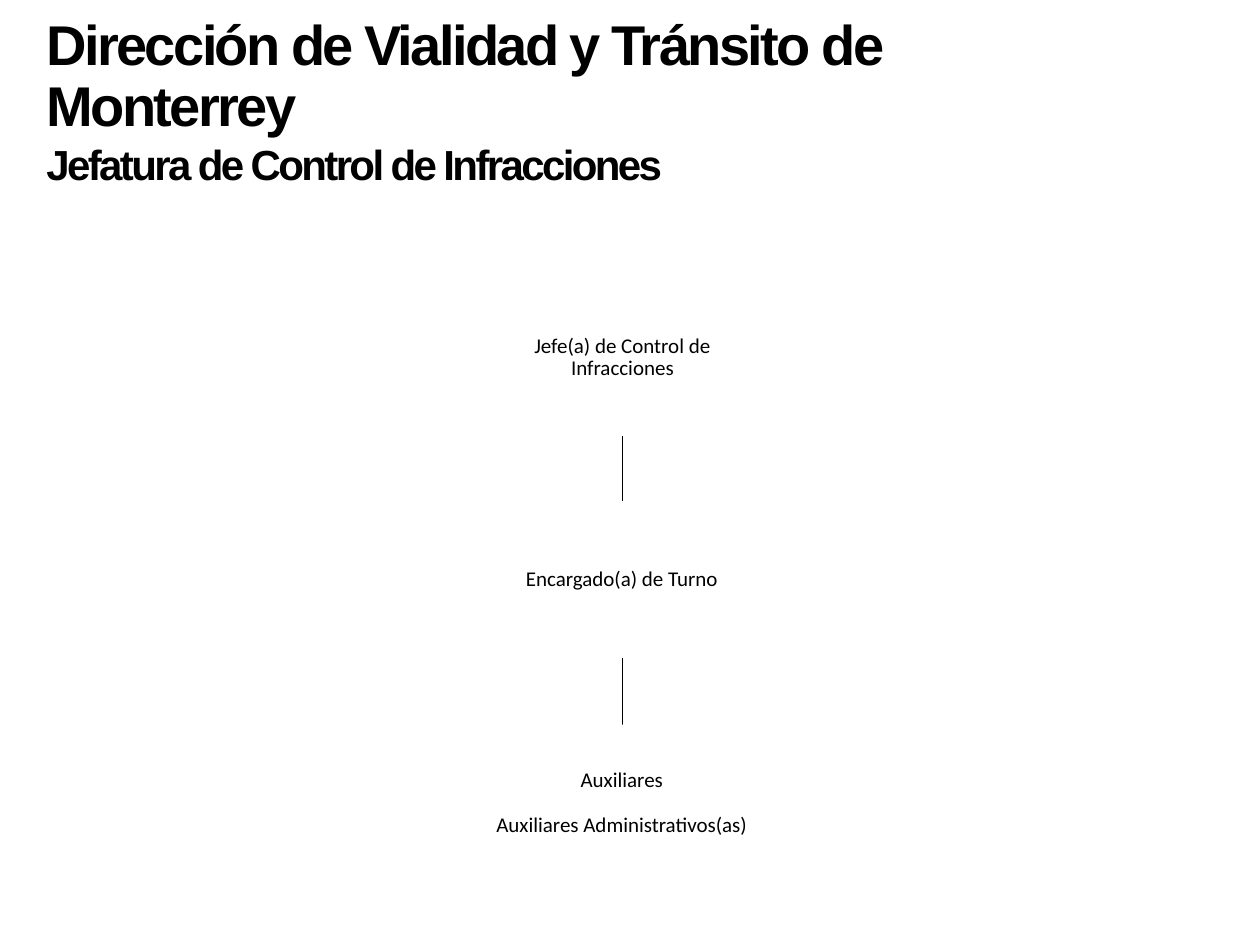
import pptx
import pptx.dml.color
import pptx.enum.shapes
import pptx.enum.text
import pptx.oxml.ns
import pptx.util
from lxml import etree

Inches = pptx.util.Inches
Pt = pptx.util.Pt
BLACK = pptx.dml.color.RGBColor(0x00, 0x00, 0x00)
WHITE = pptx.dml.color.RGBColor(0xFF, 0xFF, 0xFF)

HEADING = [
    ("Dirección de Vialidad y Tránsito de Monterrey", 32, 0.9),
    ("Jefatura de Control de Infracciones", 24, 1.0),
]
# Each post: lines, space between lines in points, left, top, width, height, filled
POSTS = [
    (["Jefe(a) de Control de", "Infracciones"], 0, 3.58, 2.22, 2.72, 1.24, False),
    (["Encargado(a) de Turno"], 0, 3.74, 3.98, 2.39, 1.24, True),
    (["Auxiliares", "Auxiliares Administrativos(as)"], 13, 3.74, 5.75, 2.39, 1.25, True),
]
CENTER = 4.94


def add_run(paragraph, text, font_name, size):
    run = paragraph.add_run()
    run.text = text
    run.font.name = font_name
    run.font.size = Pt(size)
    run.font.color.rgb = BLACK
    return run


def add_heading(slide, left, top, width, height):
    heading = slide.shapes.add_textbox(
        Inches(left), Inches(top), Inches(width), Inches(height))
    frame = heading.text_frame
    frame.word_wrap = True
    frame.auto_size = pptx.enum.text.MSO_AUTO_SIZE.SHAPE_TO_FIT_TEXT
    for index, (text, size, spacing) in enumerate(HEADING):
        paragraph = frame.add_paragraph() if index else frame.paragraphs[0]
        paragraph.line_spacing = spacing
        run = add_run(paragraph, text, "Arial", size)
        run.font.bold = True
        # Tight letter spacing, in hundredths of a point
        run.font._element.set("spc", "-150")


def add_post(slide, lines, gap, left, top, width, height, filled):
    box = [Inches(value) for value in (left, top, width, height)]
    if filled:
        post = slide.shapes.add_shape(
            pptx.enum.shapes.MSO_SHAPE.RECTANGLE, *box)
        post.shadow.inherit = False
        post.fill.solid()
        post.fill.fore_color.rgb = WHITE
        post.line.fill.background()
    else:
        post = slide.shapes.add_textbox(*box)
    frame = post.text_frame
    frame.word_wrap = True
    frame.vertical_anchor = pptx.enum.text.MSO_ANCHOR.MIDDLE
    frame.margin_left = frame.margin_right = Inches(0.01)
    frame.margin_top = frame.margin_bottom = Inches(0.01)
    for index, text in enumerate(lines):
        paragraph = frame.add_paragraph() if index else frame.paragraphs[0]
        paragraph.alignment = pptx.enum.text.PP_ALIGN.CENTER
        paragraph.line_spacing = 0.9
        if index and gap:
            paragraph.space_before = Pt(gap)
        add_run(paragraph, text, "Calibri", 12)


def add_link(slide, x, top, bottom):
    link = slide.shapes.add_connector(
        pptx.enum.shapes.MSO_CONNECTOR.STRAIGHT,
        Inches(x), Inches(top), Inches(x), Inches(bottom))
    link.line.color.rgb = BLACK
    link.line.width = Pt(1)
    etree.SubElement(link._element.spPr, pptx.oxml.ns.qn("a:effectLst"))


def add_chain(slide):
    # Links run from the foot of each post to the head of the next
    for upper, lower in zip(POSTS, POSTS[1:]):
        add_link(slide, CENTER, upper[3] + upper[5], lower[3])
    for post in POSTS:
        add_post(slide, *post)


def main():
    deck = pptx.Presentation()
    deck.slide_width = Inches(10)
    deck.slide_height = Inches(7.5)
    slide = deck.slides.add_slide(deck.slide_layouts[6])
    add_chain(slide)
    add_heading(slide, 0.27, 0.09, 7.46, 1.47)
    deck.save("out.pptx")


if __name__ == "__main__":
    main()
